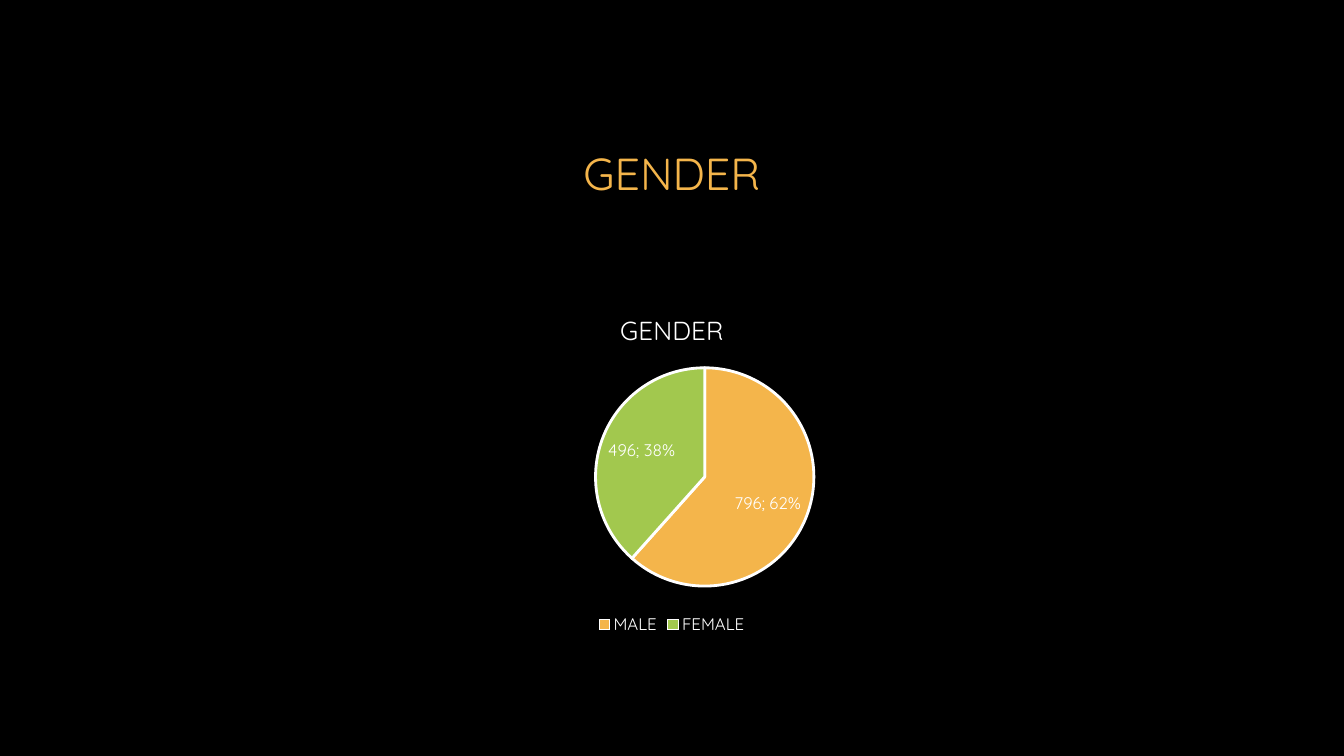
"""Build the gender slide: a centred heading above a pie chart."""
import dataclasses

import lxml.etree
import pptx
import pptx.chart.data
import pptx.dml.color
import pptx.enum.chart
import pptx.enum.text
import pptx.oxml.ns
import pptx.util

Inches = pptx.util.Inches
RGBColor = pptx.dml.color.RGBColor


@dataclasses.dataclass(frozen=True)
class Theme:
    font: str = "Quicksand"
    background: str = "000000"
    text: str = "FFFFFF"
    accent: str = "F4B54B"
    slices: tuple = ("F4B54B", "A2C84E")
    heading_size: float = 32
    chart_title_size: float = 18.6
    label_size: float = 12
    outline_width: float = 2


def apply_format(target, values):
    for name, value in values.items():
        setattr(target, name, value)


def add_element(parent, tag, index, **attributes):
    element = lxml.etree.Element(pptx.oxml.ns.qn(tag), attributes)
    parent.insert(index, element)
    return element


class SlideBuilder:
    def __init__(self, presentation, theme):
        self.theme = theme
        self.slide = presentation.slides.add_slide(presentation.slide_layouts[6])
        self.fill(self.slide.background, theme.background)

    def fill(self, target, color):
        target.fill.solid()
        target.fill.fore_color.rgb = RGBColor.from_string(color)

    def style_font(self, font, size, color):
        apply_format(font, {"name": self.theme.font, "size": pptx.util.Pt(size), "bold": False})
        font.color.rgb = RGBColor.from_string(color)

    def add_heading(self, text, left, top, width, height):
        shape = self.slide.shapes.add_textbox(*map(Inches, (left, top, width, height)))
        apply_format(shape.text_frame, {
            "word_wrap": True,
            "vertical_anchor": pptx.enum.text.MSO_ANCHOR.MIDDLE,
        })
        paragraph = shape.text_frame.paragraphs[0]
        paragraph.alignment = pptx.enum.text.PP_ALIGN.CENTER
        run = paragraph.add_run()
        run.text = text
        self.style_font(run.font, self.theme.heading_size, self.theme.accent)

    def add_pie(self, title, values, left, top, width, height, plot_area):
        theme = self.theme
        data = pptx.chart.data.CategoryChartData()
        data.categories = list(values)
        data.add_series(title, list(values.values()))
        chart = self.slide.shapes.add_chart(
            pptx.enum.chart.XL_CHART_TYPE.PIE,
            *map(Inches, (left, top, width, height)), data).chart
        self.style_font(chart.font, theme.label_size, theme.text)

        chart.has_title = True
        paragraph = chart.chart_title.text_frame.paragraphs[0]
        run = paragraph.add_run()
        run.text = title
        self.style_font(run.font, theme.chart_title_size, theme.text)
        chart.chart_title.include_in_layout = False

        chart.has_legend = True
        apply_format(chart.legend, {
            "position": pptx.enum.chart.XL_LEGEND_POSITION.BOTTOM,
            "include_in_layout": False,
        })
        self.style_font(chart.legend.font, theme.label_size, theme.text)

        plot = chart.plots[0]
        plot.vary_by_categories = True
        series = plot.series[0]
        for index, color in enumerate(theme.slices):
            slice_format = series.points[index].format
            self.fill(slice_format, color)
            slice_format.line.color.rgb = RGBColor.from_string(theme.text)
            slice_format.line.width = pptx.util.Pt(theme.outline_width)
        self.add_slice_labels(series)
        self.place_plot(chart, plot_area)

    def add_slice_labels(self, series):
        labels = series.data_labels
        apply_format(labels, {
            "show_value": True,
            "show_percentage": True,
            "position": pptx.enum.chart.XL_LABEL_POSITION.INSIDE_END,
        })
        self.style_font(labels.font, self.theme.label_size, self.theme.text)
        element = series._element.find(pptx.oxml.ns.qn("c:dLbls"))
        bubble = element.find(pptx.oxml.ns.qn("c:showBubbleSize"))
        add_element(element, "c:separator", element.index(bubble) + 1).text = "; "

    def place_plot(self, chart, plot_area):
        area = chart._chartSpace.chart.plotArea
        for layout in area.findall(pptx.oxml.ns.qn("c:layout")):
            area.remove(layout)
        layout = add_element(area, "c:layout", 0)
        manual = add_element(layout, "c:manualLayout", 0)
        settings = {"layoutTarget": "inner", "xMode": "edge", "yMode": "edge"} | plot_area
        for index, (name, value) in enumerate(settings.items()):
            add_element(manual, f"c:{name}", index, val=str(value))


def main():
    presentation = pptx.Presentation()
    apply_format(presentation, {"slide_width": Inches(13.33), "slide_height": Inches(7.5)})
    builder = SlideBuilder(presentation, Theme())
    builder.add_heading("GENDER", 1.25, 0.67, 10.83, 2.08)
    builder.add_pie("GENDER", {"MALE": 796, "FEMALE": 496}, 1.25, 2.92, 10.83, 3.42,
                    {"x": 0.43, "y": 0.21, "w": 0.2, "h": 0.64})
    presentation.save("out.pptx")


if __name__ == "__main__":
    main()
